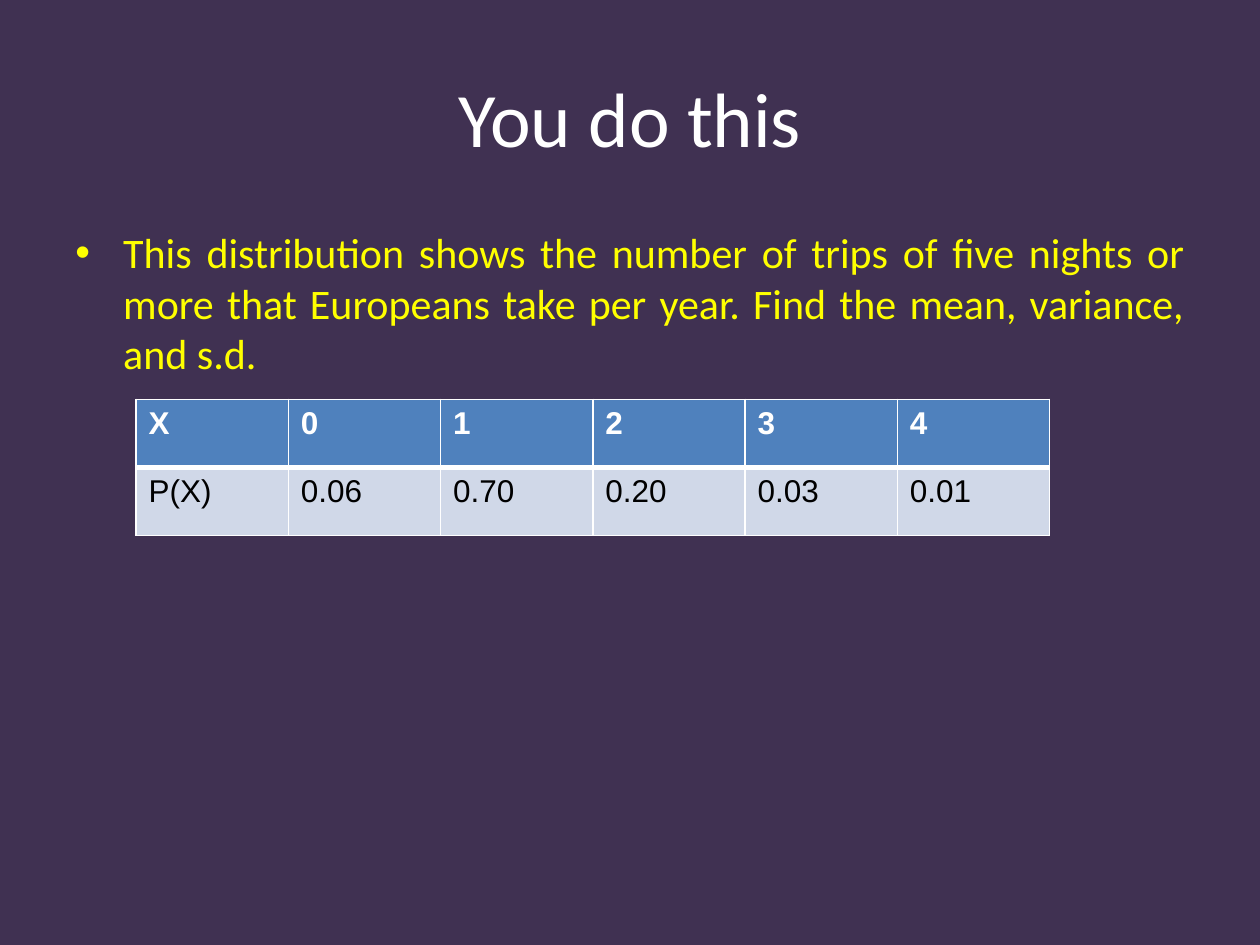
from lxml.etree import SubElement
from pptx import Presentation
from pptx.dml.color import RGBColor
from pptx.enum.text import MSO_ANCHOR as Anchor, PP_ALIGN as Align
from pptx.oxml.ns import qn
from pptx.util import Inches, Pt

COLORS = {
    "background": "403152",
    "white": "FFFFFF",
    "black": "000000",
    "question": "FFFF00",
    "header": "4F81BD",
    "body": "D0D8E8",
}
DISTRIBUTION = [
    ["X", "0", "1", "2", "3", "4"],
    ["P(X)", "0.06", "0.70", "0.20", "0.03", "0.01"],
]
QUESTION = (
    "This distribution shows the number of trips of five nights or more that "
    "Europeans take per year. Find the mean, variance, and s.d."
)


def color(name):
    """Return the named colour."""
    return RGBColor.from_string(COLORS[name])


def write_text(frame, text, size=18, font="Calibri", fill="white", bold=False,
               align=Align.LEFT, anchor=Anchor.TOP):
    """Write one formatted paragraph and return it."""
    frame.word_wrap = True
    frame.vertical_anchor = anchor
    paragraph = frame.paragraphs[0]
    paragraph.alignment = align
    run = paragraph.add_run()
    run.text = text
    run.font.size = Pt(size)
    run.font.name = font
    run.font.bold = bold
    run.font.color.rgb = color(fill)
    return paragraph


def add_title(slide, text):
    """Place and fill the title placeholder."""
    title = slide.shapes.title
    title.left, title.top = Inches(0.5), Inches(0.3)
    title.width, title.height = Inches(9), Inches(1.25)
    write_text(title.text_frame, text, size=44, align=Align.CENTER, anchor=Anchor.MIDDLE)


def add_bullet(slide, text):
    """Add the justified question with a hanging bullet."""
    box = slide.shapes.add_textbox(Inches(0.5), Inches(1.75), Inches(9), Inches(4.95))
    paragraph = write_text(box.text_frame, text, size=24, fill="question", align=Align.JUSTIFY)
    paragraph.space_before = Pt(4.8)
    properties = paragraph._p.get_or_add_pPr()
    properties.set("marL", str(Inches(0.38)))
    properties.set("indent", str(-Inches(0.38)))
    SubElement(properties, qn("a:buFont"), typeface="Arial")
    SubElement(properties, qn("a:buChar"), char="•")


def add_borders(cell, **widths):
    """Draw white borders of the given point widths, keyed by side."""
    properties = cell._tc.get_or_add_tcPr()
    for side in "LRTB":
        line = SubElement(properties, qn(f"a:ln{side}"), w=str(Pt(widths.get(side, 1))))
        fill = SubElement(line, qn("a:solidFill"))
        SubElement(fill, qn("a:srgbClr"), val=COLORS["white"])


def add_distribution(slide, rows):
    """Add the probability table with a bold header row."""
    frame = slide.shapes.add_table(len(rows), len(rows[0]), Inches(1.08), Inches(3.17),
                                   Inches(7.25), Inches(1.08))
    for row_index, row in enumerate(rows):
        header = row_index == 0
        for column_index, text in enumerate(row):
            cell = frame.table.cell(row_index, column_index)
            add_borders(cell, **({"B": 3} if header else {"T": 3}))
            cell.fill.solid()
            cell.fill.fore_color.rgb = color("header" if header else "body")
            write_text(cell.text_frame, text, font="Arial", bold=header,
                       fill="white" if header else "black")


def main():
    """Build and save the slide."""
    presentation = Presentation()
    presentation.slide_width, presentation.slide_height = Inches(10), Inches(7.5)
    slide = presentation.slides.add_slide(presentation.slide_layouts[5])
    slide.background.fill.solid()
    slide.background.fill.fore_color.rgb = color("background")
    add_title(slide, "You do this")
    add_bullet(slide, QUESTION)
    add_distribution(slide, DISTRIBUTION)
    presentation.save("out.pptx")


if __name__ == "__main__":
    main()
